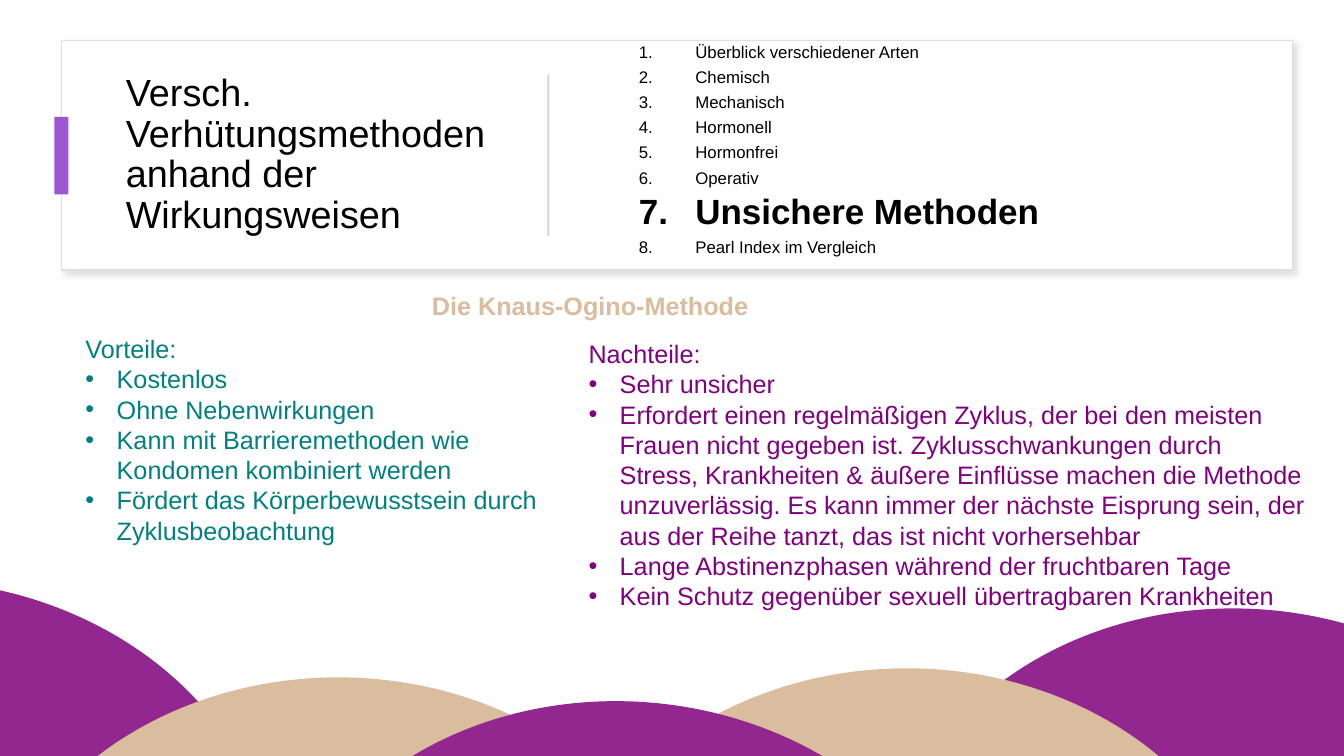
from lxml import etree
from pptx import Presentation
from pptx.dml.color import RGBColor
from pptx.enum.shapes import MSO_SHAPE
from pptx.enum.text import MSO_ANCHOR, PP_ALIGN
from pptx.oxml.ns import qn
from pptx.util import Inches, Pt

RECT, OVAL = MSO_SHAPE.RECTANGLE, MSO_SHAPE.OVAL
TOP, MIDDLE = MSO_ANCHOR.TOP, MSO_ANCHOR.MIDDLE
LEFT, CENTER = PP_ALIGN.LEFT, PP_ALIGN.CENTER
COLS, ROWS = 80, 45
COLORS = {
    "white": "FFFFFF", "black": "000000", "border": "DEDEDE", "divider": "D5D5D5",
    "shadow": "CABECD", "accent": "9B57D3", "purple": "92278F", "sand": "DABC9E",
    "teal": "008080", "plum": "800080",
}
AGENDA = [
    "Überblick verschiedener Arten", "Chemisch", "Mechanisch", "Hormonell",
    "Hormonfrei", "Operativ", "Unsichere Methoden", "Pearl Index im Vergleich",
]
CURRENT = "Unsichere Methoden"
PROS = [
    "Kostenlos",
    "Ohne Nebenwirkungen",
    "Kann mit Barrieremethoden wie Kondomen kombiniert werden",
    "Fördert das Körperbewusstsein durch Zyklusbeobachtung",
]
CONS = [
    "Sehr unsicher",
    "Erfordert einen regelmäßigen Zyklus, der bei den meisten Frauen nicht gegeben ist. "
    "Zyklusschwankungen durch Stress, Krankheiten & äußere Einflüsse machen die Methode "
    "unzuverlässig. Es kann immer der nächste Eisprung sein, der aus der Reihe tanzt, "
    "das ist nicht vorhersehbar",
    "Lange Abstinenzphasen während der fruchtbaren Tage",
    "Kein Schutz gegenüber sexuell übertragbaren Krankheiten",
]
HILL_SIZE = (42.78, 36.42)
HILLS = [
    (-26.28, 34.56, "purple", 4.8),
    (-1.26, 40.32, "sand", 0),
    (52.56, 36.24, "purple", 4.8),
    (32.58, 39.78, "sand", 0),
    (15.84, 41.76, "purple", 4.8),
]


class Deck:
    """Draws styled elements on one slide, placed in grid columns and rows."""

    def __init__(self):
        self.prs = Presentation()
        self.prs.slide_width, self.prs.slide_height = Inches(13.333), Inches(7.5)
        self.s = self.prs.slides.add_slide(self.prs.slide_layouts[6])

    def box(self, x, y, w, h):
        """Turn grid units into slide lengths."""
        col, row = self.prs.slide_width / COLS, self.prs.slide_height / ROWS
        return [round(v) for v in (x * col, y * row, w * col, h * row)]

    def shape(self, kind, at, fill, line=None, rotation=0):
        """Add a filled preset shape."""
        sp = self.s.shapes.add_shape(kind, *self.box(*at))
        sp.shadow.inherit = False
        sp.rotation = rotation
        sp.fill.solid()
        sp.fill.fore_color.rgb = RGBColor.from_string(COLORS[fill])
        if line:
            sp.line.color.rgb = RGBColor.from_string(COLORS[line])
            sp.line.width = Pt(1)
        else:
            sp.line.fill.background()
        return sp

    def shadow(self, sp):
        """Give a shape a soft diagonal shadow."""
        effects = sp._element.spPr.find(qn("a:effectLst"))
        outer = etree.SubElement(effects, qn("a:outerShdw"), blurRad=str(Pt(4)),
                                 dist=str(Pt(3)), dir="2700000", algn="tl", rotWithShape="0")
        color = etree.SubElement(outer, qn("a:srgbClr"), val=COLORS["shadow"])
        etree.SubElement(color, qn("a:alpha"), val="50000")

    def text_frame(self, at, anchor=TOP):
        """Add a wrapping text box and return its frame."""
        tf = self.s.shapes.add_textbox(*self.box(*at)).text_frame
        tf.word_wrap = True
        tf.vertical_anchor = anchor
        return tf

    def paragraph(self, tf, text, color, size, bold=False, marker=None, indent=(0, 0), **formats):
        """Write one paragraph, with an optional bullet or number."""
        p = tf.paragraphs[0] if not tf.paragraphs[0].runs else tf.add_paragraph()
        for name, value in formats.items():
            setattr(p, name, value)
        if marker:
            pPr = p._p.get_or_add_pPr()
            for name, value in zip(("marL", "indent"), indent):
                pPr.set(name, str(Inches(value)))
            etree.SubElement(pPr, qn("a:buFont"), typeface="Arial")
            tag, key = ("a:buAutoNum", "type") if marker == "arabicPeriod" else ("a:buChar", "char")
            etree.SubElement(pPr, qn(tag), {key: marker})
        r = p.add_run()
        r.text = text
        for name, value in {"name": "Arial", "size": Pt(size), "bold": bold}.items():
            setattr(r.font, name, value)
        r.font.color.rgb = RGBColor.from_string(COLORS[color])

    def agenda(self, at, items, current):
        """Add the numbered agenda with the current item enlarged."""
        tf = self.text_frame(at, MIDDLE)
        for i, item in enumerate(items):
            active = item == current
            self.paragraph(tf, item, "black", 25 if active else 12, active, "arabicPeriod",
                           (1.06, -0.56), level=1, line_spacing=0.9,
                           space_before=Pt(5 if i else 0))

    def bullets(self, at, heading, items, color):
        """Add a heading with a bulleted list below it."""
        tf = self.text_frame(at)
        self.paragraph(tf, heading, color, 18, alignment=LEFT)
        for item in items:
            self.paragraph(tf, item, color, 18, marker="•", indent=(0.31, -0.31))


def main():
    """Build and save the slide."""
    deck = Deck()
    card = deck.shape(RECT, (3.66, 2.4, 73.26, 13.68), "white", "border")
    deck.shadow(card)
    title = deck.text_frame((6.9, 3.84, 24, 10.8), MIDDLE)
    deck.paragraph(title, "Versch. Verhütungsmethoden anhand der Wirkungsweisen",
                   "black", 27, line_spacing=0.9)
    deck.shape(RECT, (3.24, 6.96, 0.84, 4.62), "accent")
    deck.shape(RECT, (32.58, 4.44, 0.12, 9.6), "divider")
    deck.agenda((34.44, 2.4, 40.08, 13.14), AGENDA, CURRENT)
    heading = deck.text_frame((-1.5, 16.98, 73.26, 2.4))
    deck.paragraph(heading, "Die Knaus-Ogino-Methode", "sand", 18, True, alignment=CENTER)
    for x, y, color, rotation in HILLS:
        deck.shape(OVAL, (x, y, *HILL_SIZE), color, rotation=rotation)
    deck.bullets((4.5, 19.56, 29.94, 13.32), "Vorteile:", PROS, "teal")
    deck.bullets((34.44, 19.86, 43.86, 16.98), "Nachteile:", CONS, "plum")
    deck.prs.save("out.pptx")


if __name__ == "__main__":
    main()
